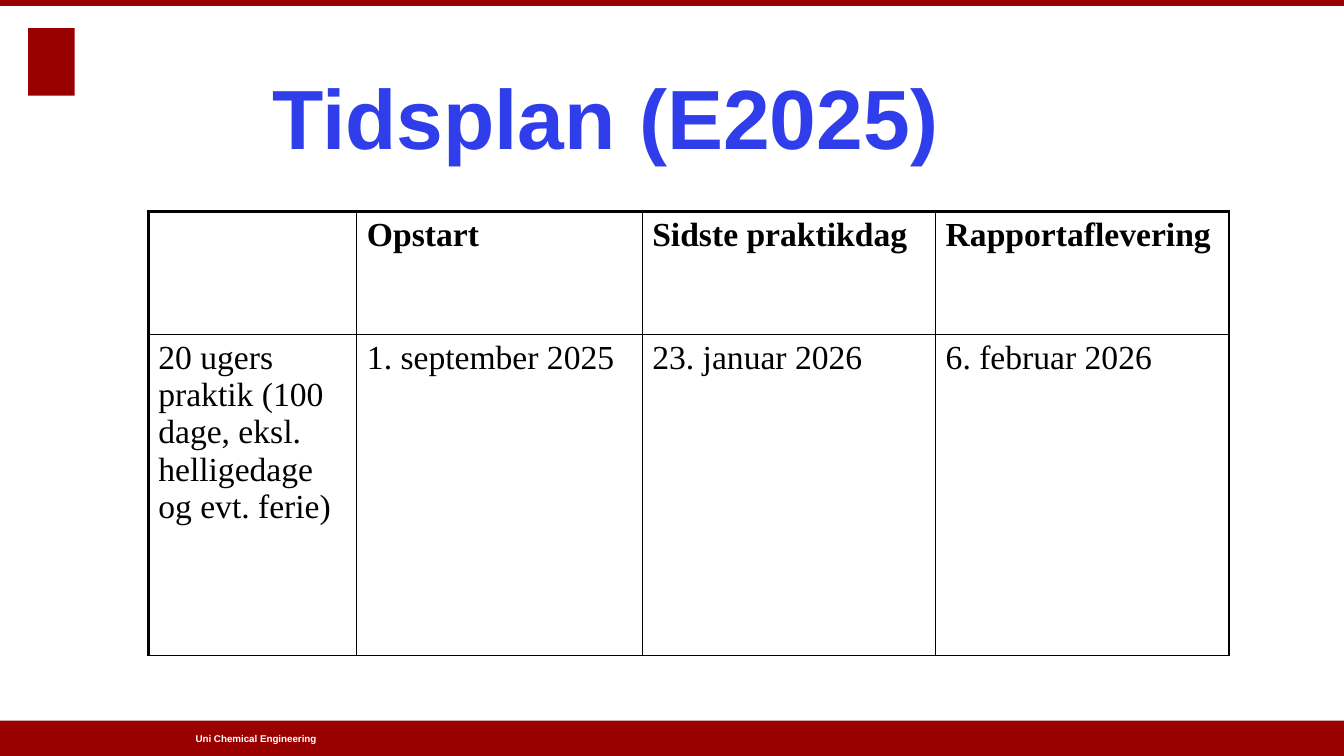
from lxml import etree
from pptx import Presentation
from pptx.dml.color import RGBColor
from pptx.enum.shapes import MSO_SHAPE
from pptx.enum.text import MSO_ANCHOR, PP_ALIGN
from pptx.oxml.ns import qn
from pptx.util import Inches, Pt

RECTANGLE = MSO_SHAPE.RECTANGLE
TOP, MIDDLE = MSO_ANCHOR.TOP, MSO_ANCHOR.MIDDLE
LEFT, CENTER = PP_ALIGN.LEFT, PP_ALIGN.CENTER

DARK_RED = RGBColor(0x99, 0x00, 0x00)
TITLE_BLUE = RGBColor(0x2F, 0x3E, 0xEA)
WHITE = RGBColor(0xFF, 0xFF, 0xFF)
BLACK = RGBColor(0x00, 0x00, 0x00)

THIN, THICK = Pt(1), Pt(2.25)
COLUMN_WIDTHS = (2.07, 2.83, 2.91, 2.91)
ROW_HEIGHTS = (1.22, 3.18)
SCHEDULE = (
    ("", "Opstart", "Sidste praktikdag", "Rapportaflevering"),
    ("20 ugers praktik (100 dage, eksl. helligedage og evt. ferie)",
     "1. september 2025", "23. januar 2026", "6. februar 2026"),
)


def write_text(text_frame, text, *, size, color, font="Arial", bold=True,
               align=LEFT, anchor=TOP, wrap=True):
    text_frame.word_wrap = wrap
    text_frame.vertical_anchor = anchor
    paragraph = text_frame.paragraphs[0]
    paragraph.alignment = align
    run = paragraph.add_run()
    run.text = text
    run.font.name = font
    run.font.size = Pt(size)
    run.font.bold = bold
    run.font.color.rgb = color


def add_block(slide, left, top, width, height):
    shape = slide.shapes.add_shape(RECTANGLE, Inches(left), Inches(top),
                                   Inches(width), Inches(height))
    shape.shadow.inherit = False
    shape.fill.solid()
    shape.fill.fore_color.rgb = DARK_RED
    shape.line.fill.background()


def add_footer(slide, text):
    box = slide.shapes.add_textbox(Inches(1.94), Inches(7.15), Inches(3.72), Inches(0.35))
    frame = box.text_frame
    frame.margin_left = frame.margin_right = frame.margin_top = frame.margin_bottom = 0
    write_text(frame, text, size=7, color=WHITE, anchor=MIDDLE)


def set_title(slide, text):
    title = slide.shapes.title
    title.left, title.top = Inches(2.57), Inches(0.6)
    title.width, title.height = Inches(6.87), Inches(1.11)
    write_text(title.text_frame, text, size=60, color=TITLE_BLUE,
               align=CENTER, wrap=False)


def set_borders(cell, widths):
    """Draw black borders; widths are given for left, right, top and bottom."""
    properties = cell._tc.get_or_add_tcPr()
    for position, (side, width) in enumerate(zip("LRTB", widths)):
        line = etree.Element(qn(f"a:ln{side}"), w=str(width))
        fill = etree.SubElement(line, qn("a:solidFill"))
        etree.SubElement(fill, qn("a:srgbClr"), val=str(BLACK))
        properties.insert(position, line)


def add_schedule(slide):
    table = slide.shapes.add_table(
        len(ROW_HEIGHTS), len(COLUMN_WIDTHS), Inches(1.47), Inches(2.1),
        Inches(sum(COLUMN_WIDTHS)), Inches(sum(ROW_HEIGHTS))).table
    table.first_row = table.horz_banding = False
    for column, width in zip(table.columns, COLUMN_WIDTHS):
        column.width = Inches(width)
    for row, height in zip(table.rows, ROW_HEIGHTS):
        row.height = Inches(height)

    last_column = len(COLUMN_WIDTHS) - 1
    for row_index, texts in enumerate(SCHEDULE):
        for column_index, text in enumerate(texts):
            cell = table.cell(row_index, column_index)
            cell.fill.background()
            # The outer frame is thick on the left, right and top
            set_borders(cell, (THICK if column_index == 0 else THIN,
                               THICK if column_index == last_column else THIN,
                               THICK if row_index == 0 else THIN,
                               THIN))
            if text:
                write_text(cell.text_frame, text, size=24, color=BLACK,
                           font="Times New Roman", bold=row_index == 0)


def main():
    presentation = Presentation()
    presentation.slide_width = Inches(13.33)
    presentation.slide_height = Inches(7.5)
    slide = presentation.slides.add_slide(presentation.slide_layouts[5])

    # Emblem, footer bar and top bar
    add_block(slide, 0.28, 0.28, 0.46, 0.67)
    add_block(slide, 0, 7.15, 13.33, 0.35)
    add_footer(slide, "Uni Chemical Engineering")
    add_block(slide, 0, 0, 13.33, 0.06)

    # Title and timetable
    set_title(slide, "Tidsplan (E2025)")
    add_schedule(slide)

    presentation.save("out.pptx")


if __name__ == "__main__":
    main()
